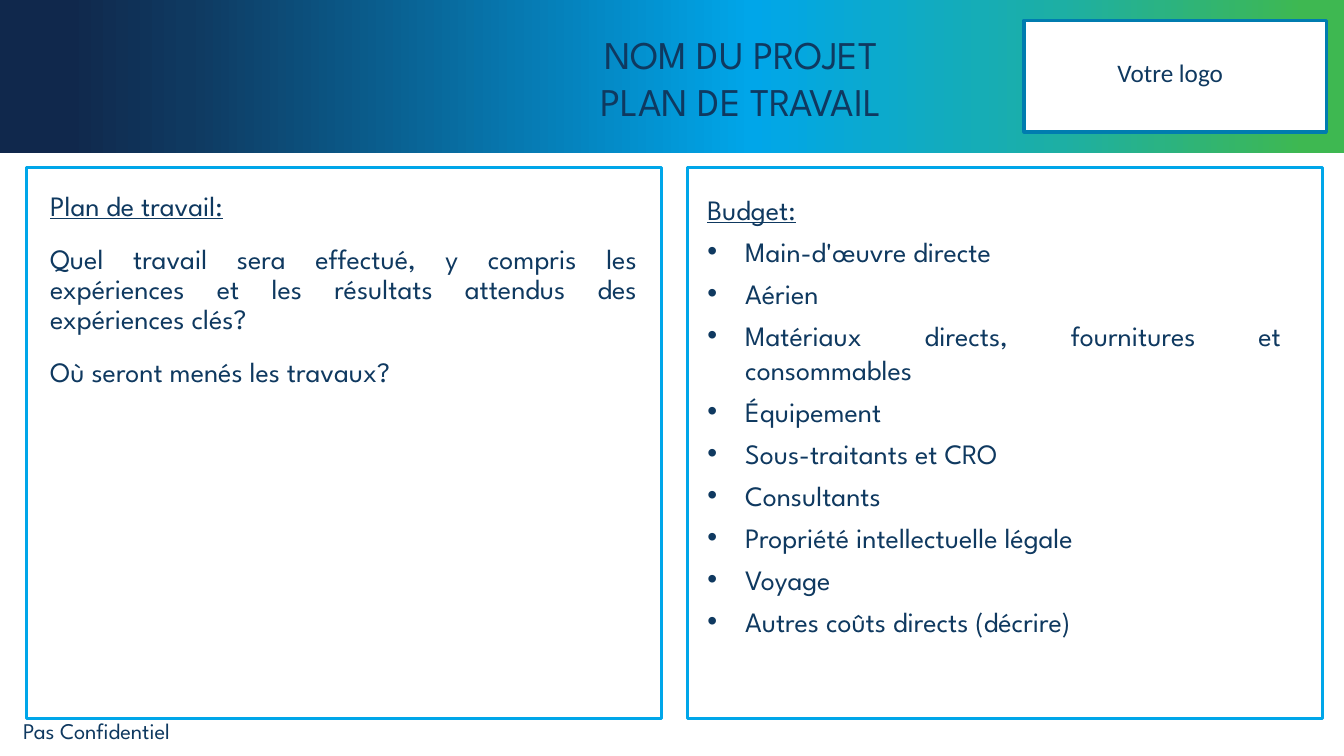
from lxml import etree
from pptx import Presentation
from pptx.dml.color import RGBColor
from pptx.enum.shapes import MSO_SHAPE
from pptx.enum.text import MSO_ANCHOR, PP_ALIGN
from pptx.oxml.ns import qn
from pptx.util import Pt

RECTANGLE = MSO_SHAPE.RECTANGLE
LEFT, CENTER, JUSTIFY = PP_ALIGN.LEFT, PP_ALIGN.CENTER, PP_ALIGN.JUSTIFY
TOP, MIDDLE = MSO_ANCHOR.TOP, MSO_ANCHOR.MIDDLE

# Content
TITLE = ["NOM DU PROJET", "PLAN DE TRAVAIL"]
LOGO_LABEL = "Votre logo"
WORK_PLAN = [
    "Plan de travail:",
    "Quel travail sera effectué, y compris les expériences et les résultats attendus des expériences clés?",
    "Où seront menés les travaux?",
]
BUDGET_HEADING = "Budget:"
BUDGET_ITEMS = [
    "Main-d'œuvre directe",
    "Aérien",
    "Matériaux directs, fournitures et consommables",
    "Équipement",
    "Sous-traitants et CRO",
    "Consultants",
    "Propriété intellectuelle légale",
    "Voyage",
    "Autres coûts directs (décrire)",
]
FOOTER = "Pas Confidentiel"

# Style
COLORS = {
    "text": "0F3960", "white": "FFFFFF", "logo_line": "007CAF", "panel_line": "00A6E9",
}
BANNER_STOPS = [(5, "10284C"), (14, "0F3960"), (56, "00A6E9"), (79, "1DAFA4"), (97, "3EB851")]
FONT, LOGO_FONT = "League Spartan", "Calibri"

# Layout, in points
WIDTH, HEIGHT = 960, 540
BANNER_HEIGHT = 109.5
PANEL_LEFT, PANEL_TOP, PANEL_WIDTH, PANEL_HEIGHT = 18.7, 119.5, 453.6, 393.8
PANEL_STEP = 472.3
TEXT_TOP = 133.9
BULLET_INDENT = 27

presentation = Presentation()
presentation.slide_width, presentation.slide_height = Pt(WIDTH), Pt(HEIGHT)
slide = presentation.slides.add_slide(presentation.slide_layouts[6])


def add_rectangle(left, top, width, height, fill=None, line=None):
    shape = slide.shapes.add_shape(RECTANGLE, Pt(left), Pt(top), Pt(width), Pt(height))
    shape.shadow.inherit = False
    if fill:
        shape.fill.solid()
        shape.fill.fore_color.rgb = RGBColor.from_string(COLORS[fill])
    else:
        shape.fill.background()
    if line:
        shape.line.color.rgb = RGBColor.from_string(COLORS[line])
        shape.line.width = Pt(2.25)
    else:
        shape.line.fill.background()
    return shape


def fill_gradient(shape, stops):
    shape.fill.gradient()
    shape.fill.gradient_angle = 0
    stop_list = shape._element.spPr.find(qn("a:gradFill")).find(qn("a:gsLst"))
    for old_stop in list(stop_list):
        stop_list.remove(old_stop)
    for percent, color in stops:
        stop = etree.SubElement(stop_list, qn("a:gs"), pos=str(percent * 1000))
        etree.SubElement(stop, qn("a:srgbClr"), val=color)


def add_text(lines, left, top, width, height, size, align=LEFT, anchor=TOP, font=FONT, wrap=True):
    box = slide.shapes.add_textbox(Pt(left), Pt(top), Pt(width), Pt(height))
    frame = box.text_frame
    frame.word_wrap = wrap
    frame.vertical_anchor = anchor
    frame.text = "\n".join(lines)
    for paragraph in frame.paragraphs:
        paragraph.alignment = align
        paragraph.font.size = Pt(size)
        paragraph.font.name = font
        paragraph.font.color.rgb = RGBColor.from_string(COLORS["text"])
    return frame.paragraphs


def add_bullet(paragraph):
    properties = paragraph._p.get_or_add_pPr()
    properties.set("marL", str(Pt(BULLET_INDENT)))
    properties.set("indent", str(-Pt(BULLET_INDENT)))
    bullet_font = etree.Element(qn("a:buFont"), typeface="Arial")
    bullet = etree.Element(qn("a:buChar"), char="•")
    text_defaults = properties.find(qn("a:defRPr"))
    text_defaults.addprevious(bullet_font)
    text_defaults.addprevious(bullet)


# Banner
banner = add_rectangle(0, 0, WIDTH, BANNER_HEIGHT)
fill_gradient(banner, BANNER_STOPS)

# Logo frame
add_rectangle(731.5, 14.4, 216, 79.9, fill="white", line="logo_line")
add_text([LOGO_LABEL], 790.6, 37.4, 90.7, 28.8, 18, CENTER, MIDDLE, LOGO_FONT, wrap=False)

# Two panels
for column in range(2):
    add_rectangle(PANEL_LEFT + column * PANEL_STEP, PANEL_TOP, PANEL_WIDTH, PANEL_HEIGHT,
                  line="panel_line")

# Work plan
work_plan = add_text(WORK_PLAN, 28.8, TEXT_TOP, 433.4, 170.6, 20, JUSTIFY)
for index, paragraph in enumerate(work_plan):
    paragraph.line_spacing = 0.9
    paragraph.space_before = Pt(10 if index else 0)
    paragraph.space_after = Pt(6)

# Budget
budget = add_text([BUDGET_HEADING] + BUDGET_ITEMS, 498.2, TEXT_TOP, 424.1, 386.6, 20, JUSTIFY)
for paragraph in budget:
    paragraph.space_after = Pt(6)
for paragraph in budget[1:]:
    add_bullet(paragraph)

for heading in (work_plan[0], budget[0]):
    heading.font.underline = True

# Title and footer
add_text(TITLE, 361.4, 18, 335.5, 74.9, 28, CENTER)
add_text([FOOTER], 9.4, 509, 148.3, 26.6, 16)

presentation.save("out.pptx")
